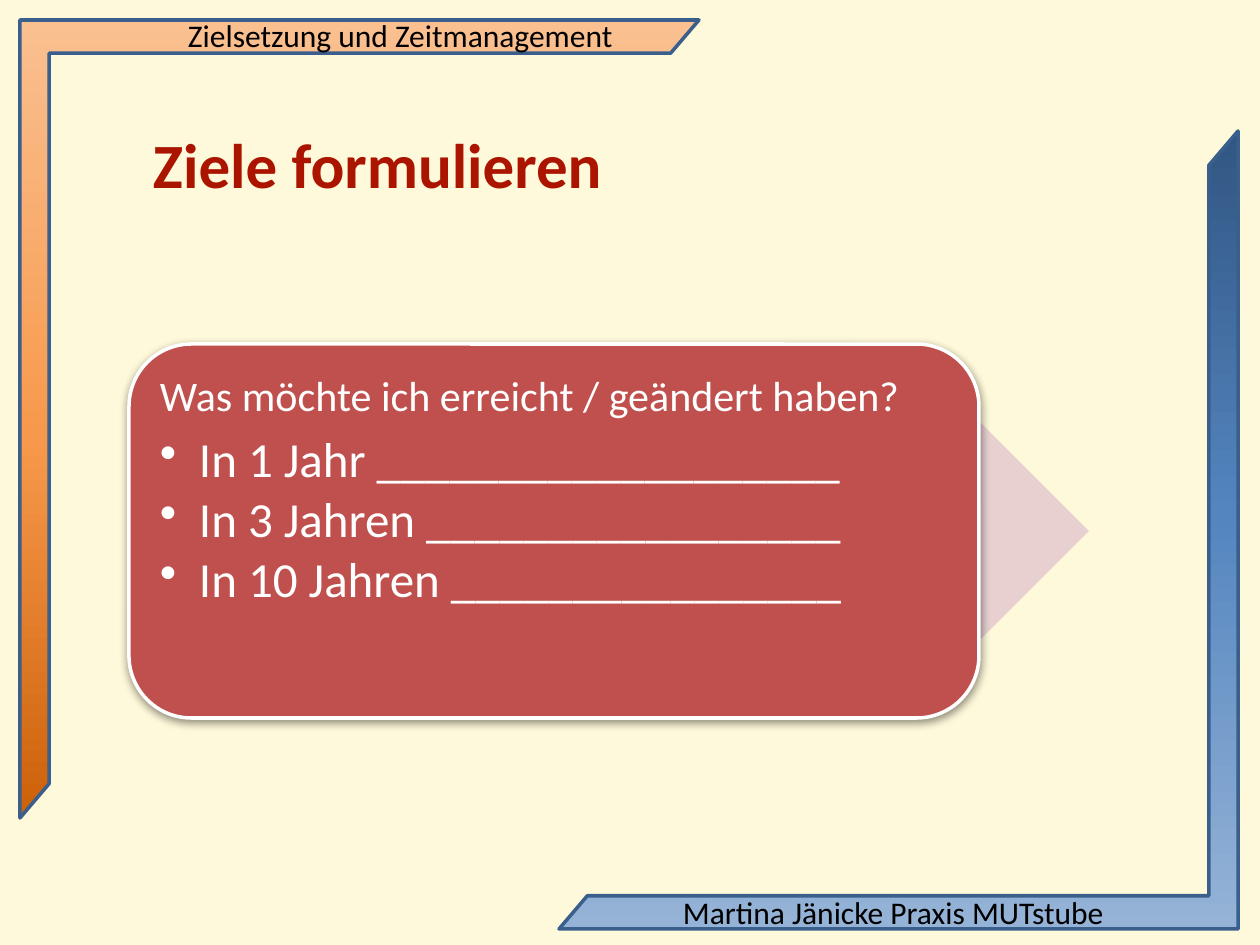
from lxml.etree import SubElement
from copy import deepcopy
from pptx import Presentation
from pptx.dml.color import RGBColor
from pptx.enum.shapes import MSO_SHAPE
from pptx.enum.text import MSO_ANCHOR
from pptx.oxml.ns import qn
from pptx.util import Emu, Pt

COLORS = {
    "paper": "FEF9DA", "frame_line": "3A5F8C", "text": "000000",
    "title": "AB1500", "arrow": "E8D0D0", "card": "C0504D", "white": "FFFFFF",
}
ORANGE = ["CC6109", "F7994C", "FAC090"]
BLUE = ["315683", "5485BF", "95B3D7"]
STOPS = [0, 0.48, 1]


def px(length):
    return Emu(round(length * 914400 / 126))


def rgb(name):
    return RGBColor.from_string(COLORS.get(name, name))


class SlideBuilder:
    font = "Calibri"

    def __init__(self, slide):
        self.slide = slide
        slide.background.fill.solid()
        slide.background.fill.fore_color.rgb = rgb("paper")

    def shape(self, kind, box, fill=None, line=None):
        shape = self.slide.shapes.add_shape(kind, *map(px, box))
        shape.shadow.inherit = False
        if fill:
            shape.fill.solid()
            shape.fill.fore_color.rgb = rgb(fill)
        if line:
            shape.line.color.rgb = rgb(line)
            shape.line.width = Pt(2)
        else:
            shape.line.fill.background()
        return shape

    def corner_frame(self, box, gradient, rotation=0):
        frame = self.shape(MSO_SHAPE.HALF_FRAME, box, line="frame_line")
        frame.rotation = rotation
        frame.adjustments[0], frame.adjustments[1] = 0.049, 0.043
        frame.fill.gradient()
        frame.fill.gradient_angle = 90
        stop_list = frame._element.spPr.find(".//" + qn("a:gsLst"))
        stop_list.append(deepcopy(stop_list[0]))
        for stop, position, color in zip(frame.fill.gradient_stops, STOPS, gradient):
            stop.position = position
            stop.color.rgb = rgb(color)

    def drop_shadow(self, shape):
        effects = shape._element.spPr.find(qn("a:effectLst"))
        shadow = SubElement(effects, qn("a:outerShdw"), blurRad="63500",
                            dist="25400", dir="5400000", rotWithShape="0")
        color = SubElement(shadow, qn("a:srgbClr"), val=COLORS["text"])
        SubElement(color, qn("a:alpha"), val="43000")

    def text_box(self, box, insets=(13, 6), wrap=True, anchor=MSO_ANCHOR.TOP):
        frame = self.slide.shapes.add_textbox(*map(px, box)).text_frame
        frame.word_wrap = wrap
        frame.vertical_anchor = anchor
        frame.margin_left = frame.margin_right = px(insets[0])
        frame.margin_top = frame.margin_bottom = px(insets[1])
        return frame

    def fill_paragraph(self, paragraph, text, size, color, bold=False, spacing=None, after=0):
        paragraph.text = text
        paragraph.font.name = self.font
        paragraph.font.size = Pt(size)
        paragraph.font.bold = bold
        paragraph.font.color.rgb = rgb(color)
        paragraph.line_spacing = spacing
        paragraph.space_after = Pt(after)

    def bullet(self, paragraph):
        properties = paragraph._p.get_or_add_pPr()
        properties.set("lvl", "1")
        properties.set("marL", str(px(39)))
        properties.set("indent", str(-px(39)))
        mark = properties.makeelement(qn("a:buChar"), {"char": "•"})
        properties.find(qn("a:defRPr")).addprevious(mark)

    def label(self, box, text):
        frame = self.text_box(box, wrap=False)
        self.fill_paragraph(frame.paragraphs[0], text, 18, "text")

    def title(self, box, text):
        frame = self.text_box(box, insets=(9, 5), anchor=MSO_ANCHOR.MIDDLE)
        self.fill_paragraph(frame.paragraphs[0], text, 36, "title", True, 0.9, 4.5)

    def question_card(self, box, question, answers):
        left, top, width, height = box
        card = self.shape(MSO_SHAPE.ROUNDED_RECTANGLE, box, "card", "white")
        self.drop_shadow(card)
        pad = 18
        inner = (left + pad, top + pad, width - 2 * pad, height - 2 * pad)
        frame = self.text_box(inner, insets=(13, 13))
        self.fill_paragraph(frame.paragraphs[0], question, 24, "white",
                            spacing=0.9, after=8.4)
        for answer in answers:
            paragraph = frame.add_paragraph()
            self.fill_paragraph(paragraph, answer, 28, "white", spacing=0.9, after=4.2)
            self.bullet(paragraph)


def main():
    presentation = Presentation()
    presentation.slide_width, presentation.slide_height = px(1260), px(945)
    page = SlideBuilder(presentation.slides.add_slide(presentation.slide_layouts[6]))

    page.corner_frame((20, 20, 679, 798), ORANGE)
    page.corner_frame((559, 131, 679, 798), BLUE, rotation=180)
    page.label((175, 10, 455, 50), "Zielsetzung und Zeitmanagement")
    page.label((670, 887, 456, 50), "Martina Jänicke Praxis MUTstube")
    page.title((144, 125, 798, 87), "Ziele formulieren")

    page.shape(MSO_SHAPE.RIGHT_ARROW, (207, 344, 882, 374), "arrow")
    page.question_card(
        (129, 344, 850, 374),
        "Was möchte ich erreicht / geändert haben?",
        ["In 1 Jahr " + "_" * 19,
         "In 3 Jahren " + "_" * 17,
         "In 10 Jahren " + "_" * 16],
    )
    presentation.save("out.pptx")


if __name__ == "__main__":
    main()
